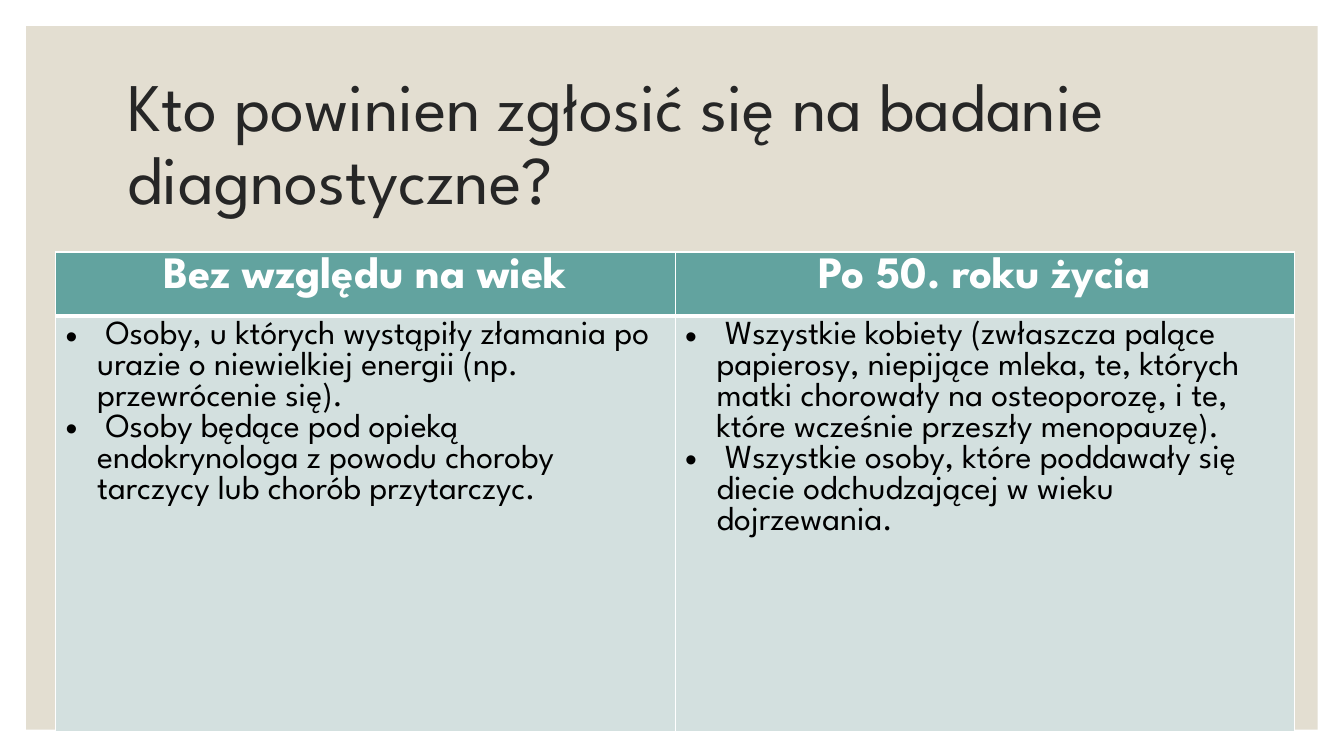
from dataclasses import dataclass

from lxml.etree import SubElement
from pptx import Presentation
from pptx.dml.color import RGBColor
from pptx.enum.shapes import MSO_SHAPE
from pptx.enum.text import MSO_ANCHOR, PP_ALIGN
from pptx.oxml.ns import qn
from pptx.util import Pt

PX = 9525  # EMU per pixel at 96 pixels to the inch


@dataclass(frozen=True)
class Theme:
    font: str = "League Spartan"
    panel: RGBColor = RGBColor(0xE3, 0xDE, 0xD1)
    title: RGBColor = RGBColor(0x26, 0x26, 0x26)
    header_fill: RGBColor = RGBColor(0x62, 0xA3, 0x9F)
    header_text: RGBColor = RGBColor(0xFF, 0xFF, 0xFF)
    body_fill: RGBColor = RGBColor(0xD3, 0xE0, 0xDF)
    body_text: RGBColor = RGBColor(0x00, 0x00, 0x00)
    border: str = "FFFFFF"
    title_size: float = 48.6
    header_size: int = 32
    body_size: int = 24


THEME = Theme()

COLUMNS = [
    ("Bez względu na wiek", [
        " Osoby, u których wystąpiły złamania po urazie o niewielkiej energii (np. przewrócenie się).",
        " Osoby będące pod opieką endokrynologa z powodu choroby tarczycy lub chorób przytarczyc.",
    ]),
    ("Po 50. roku życia", [
        " Wszystkie kobiety (zwłaszcza palące papierosy, niepijące mleka, te, których matki "
        "chorowały na osteoporozę, i te, które wcześnie przeszły menopauzę).",
        " Wszystkie osoby, które poddawały się diecie odchudzającej w wieku dojrzewania.",
    ]),
]


def add_text(paragraph, text, size, color, bold=False):
    run = paragraph.add_run()
    run.text = text
    run.font.name = THEME.font
    run.font.size = Pt(size)
    run.font.color.rgb = color
    run.font.bold = bold


def style_cell(cell, fill, top, bottom):
    """Fill the cell and draw its borders; top and bottom are widths in points."""
    properties = cell._tc.get_or_add_tcPr()
    for side, width in (("L", 1), ("R", 1), ("T", top), ("B", bottom)):
        line = SubElement(properties, qn(f"a:ln{side}"), w=str(Pt(width)))
        solid = SubElement(line, qn("a:solidFill"))
        SubElement(solid, qn("a:srgbClr"), val=THEME.border)
    cell.fill.solid()
    cell.fill.fore_color.rgb = fill


presentation = Presentation()
presentation.slide_width = 1280 * PX
presentation.slide_height = 720 * PX
slide = presentation.slides.add_slide(presentation.slide_layouts[6])

panel = slide.shapes.add_shape(MSO_SHAPE.RECTANGLE, 25 * PX, 25 * PX, 1230 * PX, 670 * PX)
panel.shadow.inherit = False
panel.fill.solid()
panel.fill.fore_color.rgb = THEME.panel
panel.line.fill.background()

title = slide.shapes.add_textbox(112 * PX, 67 * PX, 1056 * PX, 144 * PX)
title.text_frame.word_wrap = True
title.text_frame.vertical_anchor = MSO_ANCHOR.MIDDLE
title_paragraph = title.text_frame.paragraphs[0]
title_paragraph.line_spacing = 0.9
add_text(title_paragraph, "Kto powinien zgłosić się na badanie diagnostyczne?",
         THEME.title_size, THEME.title)

table = slide.shapes.add_table(2, 2, 53 * PX, 240 * PX, 1180 * PX, 457 * PX).table
table.rows[0].height = 61 * PX
table.rows[1].height = 396 * PX

for index, (heading, items) in enumerate(COLUMNS):
    table.columns[index].width = 590 * PX

    header = table.cell(0, index)
    style_cell(header, THEME.header_fill, top=1, bottom=3)
    header_paragraph = header.text_frame.paragraphs[0]
    header_paragraph.alignment = PP_ALIGN.CENTER
    add_text(header_paragraph, heading, THEME.header_size, THEME.header_text, bold=True)

    body = table.cell(1, index)
    style_cell(body, THEME.body_fill, top=3, bottom=1)
    for number, item in enumerate(items):
        frame = body.text_frame
        paragraph = frame.add_paragraph() if number else frame.paragraphs[0]
        properties = paragraph._p.get_or_add_pPr()
        properties.set("marL", str(30 * PX))
        properties.set("indent", str(-30 * PX))
        SubElement(properties, qn("a:buFont"), typeface="Arial")
        SubElement(properties, qn("a:buChar"), char="•")
        add_text(paragraph, item, THEME.body_size, THEME.body_text)

presentation.save("out.pptx")
